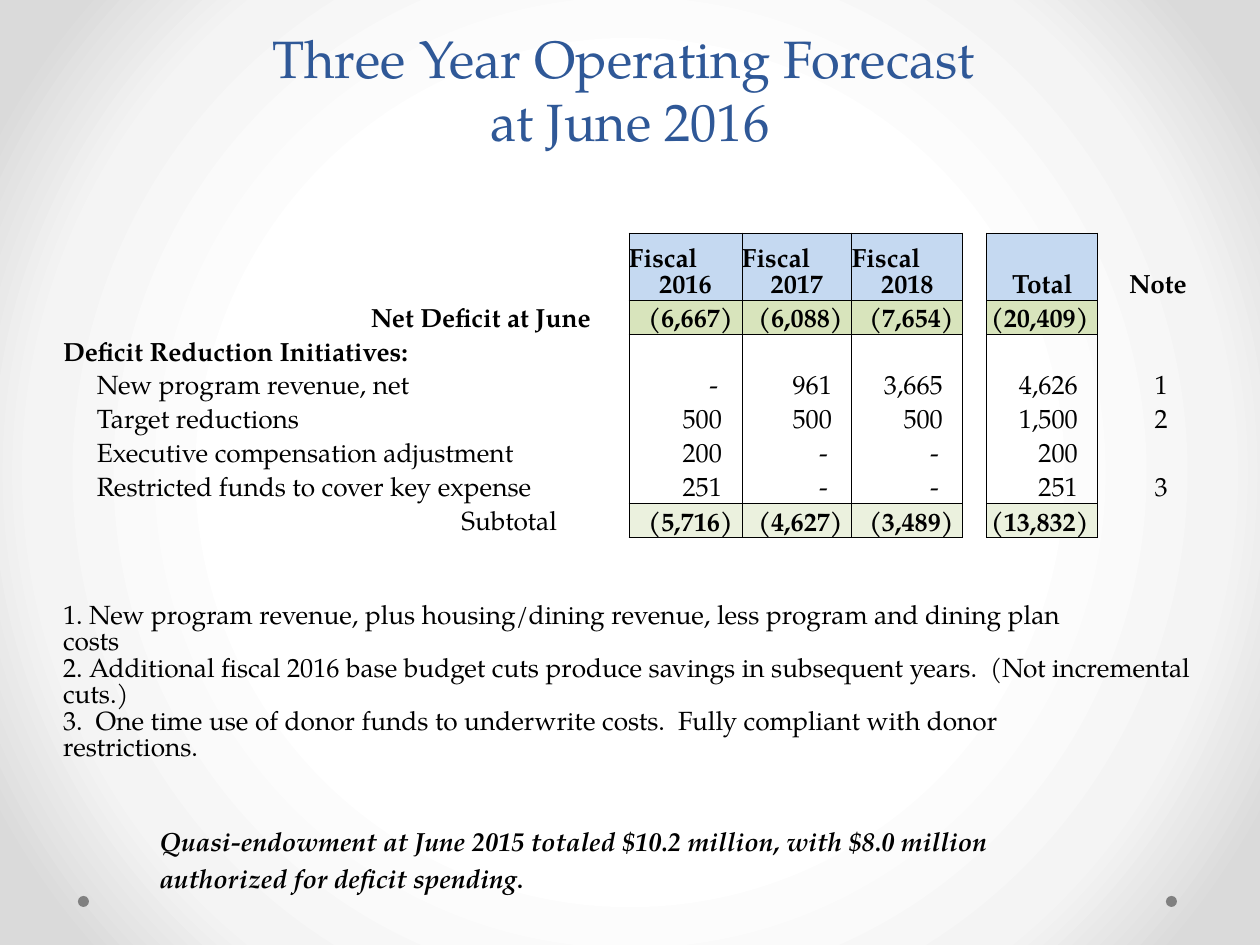
from dataclasses import dataclass

from pptx import Presentation, util as u
from pptx.dml.color import RGBColor
from pptx.enum import shapes, text
from pptx.oxml import parse_xml
from pptx.oxml.ns import nsdecls

PX = u.Inches(1) / 126
LEFT, CENTER, RIGHT = text.PP_ALIGN.LEFT, text.PP_ALIGN.CENTER, text.PP_ALIGN.RIGHT


@dataclass(frozen=True)
class Theme:
    face: str = "TeX Gyre Pagella"
    title: str = "2F5897"
    ink: str = "000000"
    dot: str = "808080"
    head: str = "C5D9F1"
    deficit: str = "D8E4BC"
    subtotal: str = "EBF1DE"
    glow: tuple = ((50, "FFFFFF"), (76, "F4F4F4"), (92, "DADADA"))
    title_pt: int = 30
    body_pt: int = 15
    stop_pt: int = 18


T = Theme()
NO_STYLE = "{2D5ABB26-0587-4C30-8999-92F81FD0307C}"
COLS = [528, 38, 108, 4, 110, 111, 24, 111, 24, 79]
ROWS = [34, 67] + [34] * 7 + [33, 34] + [53] * 3 + [34] * 2
VALUE_COLS = [2, 4, 5, 7]
NOTE_COL = 9
FIRST_ROW, LAST_ROW, NOTES_ROW = 1, 8, 11
FILLS = {1: T.head, 2: T.deficit, 8: T.subtotal}
INDENT = 34
HEADS = ["Fiscal\n2016", "Fiscal\n2017", "Fiscal\n2018", "Total"]
LINES = [
    ("Net Deficit at June", ["(6,667)", "(6,088)", "(7,654)", "(20,409)"], ""),
    ("Deficit Reduction Initiatives:", [""] * 4, ""),
    ("New program revenue, net", ["-", "961", "3,665", "4,626"], "1"),
    ("Target reductions", ["500", "500", "500", "1,500"], "2"),
    ("Executive compensation adjustment", ["200", "-", "-", "200"], ""),
    ("Restricted funds to cover key expense", ["251", "-", "-", "251"], "3"),
    ("Subtotal", ["(5,716)", "(4,627)", "(3,489)", "(13,832)"], ""),
]
LABEL_FORMATS = {
    2: dict(align=RIGHT, bold=True),
    3: dict(bold=True),
    8: dict(align=RIGHT, right=INDENT),
}
NOTES = [
    ("1. New program revenue, plus housing/dining revenue, less program and dining plan costs", 7),
    ("2. Additional fiscal 2016 base budget cuts produce savings in subsequent years.  "
     "(Not incremental cuts.)", 9),
    ("3.  One time use of donor funds to underwrite costs.  "
     "Fully compliant with donor restrictions.", 7),
]


def px(n):
    return u.Emu(round(n * PX))


def assign(obj, values):
    for name, value in values.items():
        setattr(obj, name, value)


def style(font, size, color=T.ink, **values):
    assign(font, dict(name=T.face, size=u.Pt(size), **values))
    font.color.rgb = RGBColor.from_string(color)


def add_text(s, box, anchor):
    tf = s.shapes.add_textbox(*map(px, box)).text_frame
    assign(tf, dict(word_wrap=True, vertical_anchor=anchor))
    return tf.paragraphs[0]


def background(s):
    stops = "".join(f'<a:gs pos="{pos * 1000}"><a:srgbClr val="{c}"/></a:gs>' for pos, c in T.glow)
    s._element.cSld.insert(0, parse_xml(
        f'<p:bg {nsdecls("p", "a")}><p:bgPr><a:gradFill><a:gsLst>{stops}</a:gsLst>'
        '<a:path path="circle"><a:fillToRect l="50000" t="50000" r="50000" b="50000"/></a:path>'
        '</a:gradFill><a:effectLst/></p:bgPr></p:bg>'))


def dots(s, box):
    x, y, w, h = box
    for left in (x + w - h, x):
        sp = s.shapes.add_shape(shapes.MSO_SHAPE.OVAL, *map(px, (left, y, h, h)))
        sp.shadow.inherit = False
        sp.fill.solid()
        sp.fill.fore_color.rgb = RGBColor.from_string(T.dot)
        sp.line.fill.background()


def title(s, box):
    p = add_text(s, box, text.MSO_ANCHOR.BOTTOM)
    assign(p, dict(alignment=CENTER, line_spacing=u.Pt(36)))
    for i, line in enumerate(["Three Year Operating Forecast ", "at June 2016"]):
        if i:
            p.add_line_break()
        r = p.add_run()
        r.text = line
        style(r.font, T.title_pt, T.title)


def write(cell, words, align=LEFT, bold=False, left=0, right=0):
    cell.margin_left, cell.margin_right = px(left), px(right)
    lines = words.split("\n")
    tf = cell.text_frame
    for i, line in enumerate(lines):
        p = tf.add_paragraph() if i else tf.paragraphs[0]
        first_of_two = len(lines) > 1 and i == 0
        assign(p, dict(alignment=LEFT if first_of_two else align, line_spacing=u.Pt(T.body_pt)))
        r = p.add_run()
        r.text = line
        style(r.font, T.body_pt, bold=bold)


def border(cell, sides):
    tc_pr = cell._tc.get_or_add_tcPr()
    for i, side in enumerate(sides):
        tc_pr.insert(i, parse_xml(
            f'<a:ln{side} {nsdecls("a")} w="{u.Pt(0.5)}"><a:solidFill>'
            f'<a:srgbClr val="{T.ink}"/></a:solidFill></a:ln{side}>'))


def value_format(row, value):
    if row in FILLS:
        return dict(align=RIGHT, bold=True, right=9)
    return dict(align=RIGHT, right=24 if value == "-" else 20)


def forecast(s, box):
    frame = s.shapes.add_table(len(ROWS), len(COLS), *map(px, box))
    tbl = frame.table
    assign(tbl, dict(first_row=False, horz_banding=False))
    tbl._tbl.tblPr.find("{*}tableStyleId").text = NO_STYLE
    for col, w in zip(tbl.columns, COLS):
        col.width = px(w)
    for row, h in zip(tbl.rows, ROWS):
        row.height = px(h)
    for cell in tbl.iter_cells():
        assign(cell, dict(margin_left=0, margin_right=0, margin_top=0, margin_bottom=0,
                          vertical_anchor=text.MSO_ANCHOR.BOTTOM))
        end = cell.text_frame.paragraphs[0]._p.get_or_add_endParaRPr()
        end.set("sz", str(T.body_pt * 100))

    for i in range(NOTES_ROW):
        tbl.cell(i, 2).merge(tbl.cell(i, 3))
    for i in range(NOTES_ROW + len(NOTES), len(ROWS)):
        tbl.cell(i, 1).merge(tbl.cell(i, 2))

    for col, head in zip(VALUE_COLS, HEADS):
        write(tbl.cell(FIRST_ROW, col), head, CENTER, True)
    write(tbl.cell(FIRST_ROW, NOTE_COL), "Note ", CENTER, True)
    for i, (label, values, note) in enumerate(LINES, FIRST_ROW + 1):
        write(tbl.cell(i, 0), label, **LABEL_FORMATS.get(i, dict(left=INDENT)))
        for col, value in zip(VALUE_COLS, values):
            if value:
                write(tbl.cell(i, col), value, **value_format(i, value))
        if note:
            write(tbl.cell(i, NOTE_COL), note, CENTER)

    for i in range(FIRST_ROW, LAST_ROW + 1):
        for col in VALUE_COLS:
            cell = tbl.cell(i, col)
            if i in FILLS:
                cell.fill.solid()
                cell.fill.fore_color.rgb = RGBColor.from_string(FILLS[i])
            border(cell, "LRTB" if i in FILLS else "LR")

    for i, (note, last_col) in enumerate(NOTES, NOTES_ROW):
        tbl.cell(i, 0).merge(tbl.cell(i, last_col))
        write(tbl.cell(i, 0), note)


def endowment(s, box):
    p = add_text(s, box, text.MSO_ANCHOR.TOP)
    parts = ["Quasi-endowment at June 2015 totaled $10.2 million, with $8.0 million",
             "authorized for deficit spending"]
    for i, line in enumerate(parts):
        if i:
            p.add_line_break()
        r = p.add_run()
        r.text = line
        style(r.font, T.body_pt, bold=True, italic=True)
    r = p.add_run()
    r.text = "."
    style(r.font, T.stop_pt)


def main():
    prs = Presentation()
    assign(prs, dict(slide_width=px(1260), slide_height=px(945)))
    s = prs.slides.add_slide(prs.slide_layouts[6])
    background(s)
    dots(s, (78, 896, 1099, 11))
    title(s, (63, 0, 1134, 158))
    forecast(s, (63, 199, sum(COLS), sum(ROWS)))
    endowment(s, (147, 819, 945, 121))
    prs.save("out.pptx")


if __name__ == "__main__":
    main()
